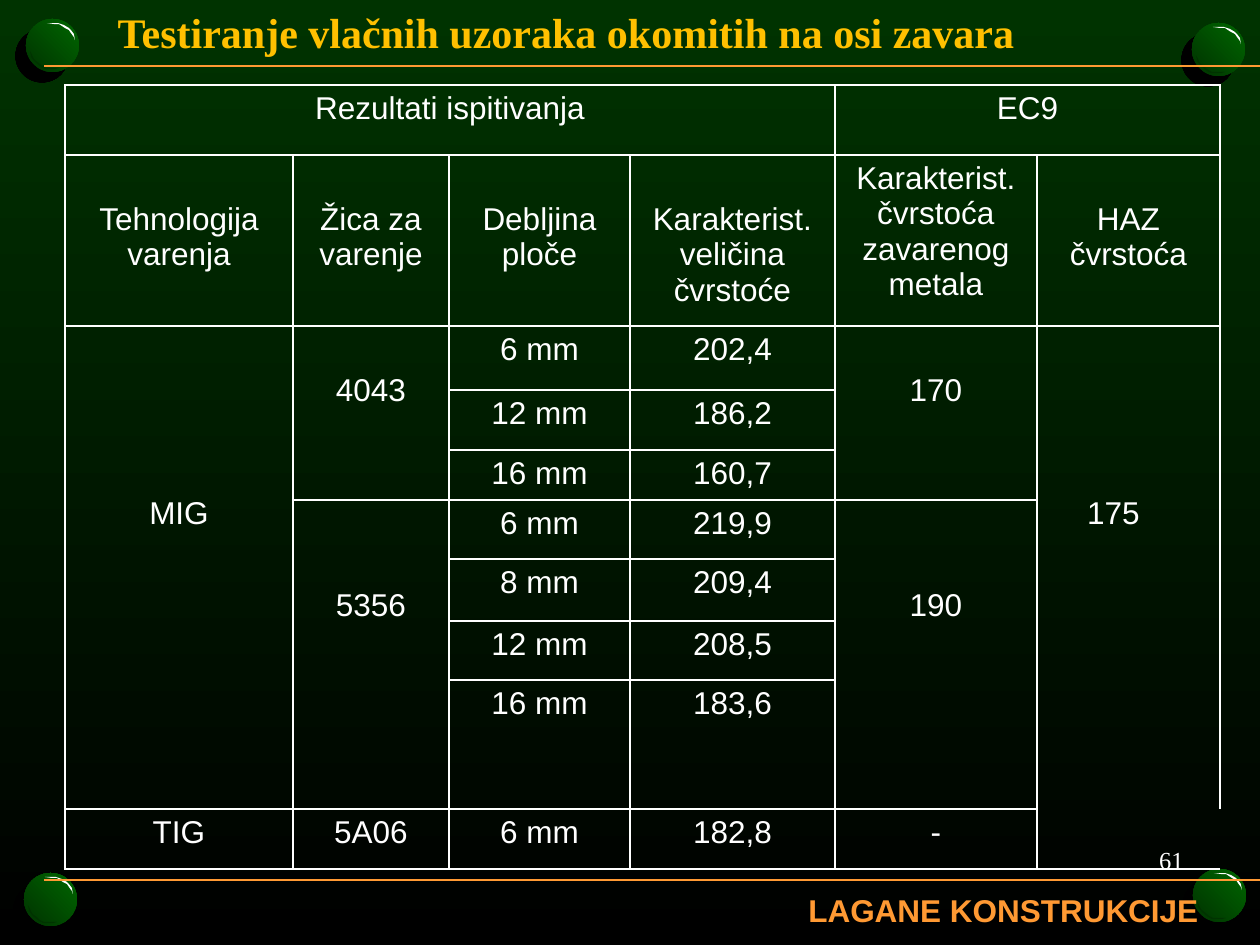
from lxml.etree import SubElement as Sub
from pptx import Presentation
from pptx.dml.color import RGBColor
from pptx.enum.shapes import MSO_CONNECTOR as Conn, MSO_SHAPE as Form
from pptx.enum.text import MSO_ANCHOR as Anchor, PP_ALIGN as Align
from pptx.oxml import parse_xml
from pptx.oxml.ns import nsdecls, qn
from pptx.util import Pt

SCALE = 914400 / 126
rgb = RGBColor.from_string


def px(*vals):
    """Turn px lengths into a list of EMU."""
    return [round(v * SCALE) for v in vals]


def write(frame, text, size=18, font="Arial", color="FFFFFF", bold=False,
          align=Align.LEFT, anchor=Anchor.TOP, wrap=True):
    frame.word_wrap = wrap
    frame.vertical_anchor = anchor
    para = frame.paragraphs[0]
    para.alignment = align
    run = para.add_run()
    run.text = text
    run.font.size = Pt(size)
    run.font.name = font
    run.font.bold = bold
    run.font.color.rgb = rgb(color)


deck = Presentation()
deck.slide_width, deck.slide_height = px(1260, 945)
slide = deck.slides.add_slide(deck.slide_layouts[5])
shapes = slide.shapes

# Background
back = slide.background.fill
back.gradient()
back.gradient_angle = 270
for stop, color in zip(back.gradient_stops, ("003300", "000000")):
    stop.color.rgb = rgb(color)

# Corner balls, each with a light and a dark rim
dot = shapes.add_shape(Form.OVAL, *px(1227, 19, 8, 8))
dot.shadow.inherit = False
dot.fill.solid()
dot.fill.fore_color.rgb = rgb("003300")
dot.line.fill.background()

SHINE = [(21, 4), (32, 4), (35, 5), (38, 6), (43, 9), (45, 11), (48, 15),
         (49, 21), (48, 18), (45, 14), (43, 11), (39, 9), (33, 5), (28, 5)]
SHADE = [(33, 49), (25, 49), (20, 49), (16, 47), (13, 44), (10, 42), (8, 40),
         (4, 32), (5, 38), (8, 42), (10, 44), (15, 48), (19, 50), (24, 50),
         (29, 50)]
for left, top in ((26, 19), (1192, 23), (1193, 869), (24, 873)):
    ball = shapes.add_shape(Form.OVAL, *px(left, top, 53, 53))
    ball.line.fill.background()
    ball.fill.gradient()
    ball.fill.gradient_angle = 45
    for stop, color in zip(ball.fill.gradient_stops, ("003300", "006600")):
        stop.color.rgb = rgb(color)
    ball._element.spPr.append(parse_xml(
        f'<a:effectLst {nsdecls("a")}><a:outerShdw dist="107950" dir="8100000"'
        ' algn="ctr" rotWithShape="0"><a:srgbClr val="000000"/></a:outerShdw>'
        '</a:effectLst>'))
    for pts, color in ((SHINE, "FFFFFF"), (SHADE, "003300")):
        spots = [(left + x, top + y) for x, y in pts]
        pen = shapes.build_freeform(*spots[0], scale=SCALE)
        pen.add_line_segments(spots[1:], close=True)
        rim = pen.convert_to_shape()
        rim.shadow.inherit = False
        rim.fill.solid()
        rim.fill.fore_color.rgb = rgb(color)
        rim.line.fill.background()

# Rules and footer
for y in (66, 880):
    rule = shapes.add_connector(Conn.STRAIGHT, *px(1260, y, 44, y))
    rule.line.color.rgb = rgb("FF9933")
    rule.line.width = Pt(0.75)
    Sub(rule._element.spPr, qn("a:effectLst"))

foot = shapes.add_textbox(*px(796, 885, 416, 50))
write(foot.text_frame, "LAGANE KONSTRUKCIJE", color="FF9933", bold=True,
      wrap=False)

# Results table
WIDTHS = (228, 156, 181, 205, 202, 153, 30)
HEIGHTS = (70, 171, 64, 60, 50, 59, 62, 59, 129, 60)
ROWS = [
    ("Rezultati ispitivanja", "", "", "", "EC9"),
    ("Tehnologija varenja", "Žica za varenje", "Debljina ploče",
     "Karakterist. veličina čvrstoće",
     "Karakterist. čvrstoća zavarenog metala", "HAZ čvrstoća"),
    ("MIG", "4043", "6 mm", "202,4", "170", "175"),
    ("", "", "12 mm", "186,2"),
    ("", "", "16 mm", "160,7"),
    ("", "5356", "6 mm", "219,9", "190"),
    ("", "", "8 mm", "209,4"),
    ("", "", "12 mm", "208,5"),
    ("", "", "16 mm", "183,6"),
    ("TIG", "5A06", "6 mm", "182,8", "-"),
]
# First and last cell of each merged block
SPANS = [(0, 0, 0, 3), (0, 4, 0, 6), (1, 5, 1, 6), (2, 0, 8, 0), (2, 1, 4, 1),
         (2, 4, 4, 4), (5, 1, 8, 1), (5, 4, 8, 4), (2, 5, 8, 5), (2, 6, 8, 6),
         (9, 5, 9, 6)]
# Lines by which a cell's text is lowered
DROPS = {(1, 0): 1, (1, 1): 1, (1, 2): 1, (1, 3): 1, (1, 5): 1, (2, 0): 4,
         (2, 1): 1, (2, 4): 1, (2, 5): 4, (5, 1): 2, (5, 4): 2}

holder = shapes.add_table(len(ROWS), len(WIDTHS),
                          *px(65, 85, sum(WIDTHS), sum(HEIGHTS)))
table = holder.table
table.first_row = table.horz_banding = False
for col, width in zip(table.columns, px(*WIDTHS)):
    col.width = width
for row, height in zip(table.rows, px(*HEIGHTS)):
    row.height = height

for r in range(len(ROWS)):
    for c in range(len(WIDTHS)):
        cell = table.cell(r, c)
        props = cell._tc.get_or_add_tcPr()
        bare = set()
        if r >= 2 and c >= 5:
            bare.add("R" if c == 5 else "L")
            bare.update({8: "B", 9: "T"}.get(r, ""))
        for side in "LRTB":
            edge = Sub(props, qn("a:ln" + side), w="12700")
            if side in bare:
                Sub(edge, qn("a:noFill"))
            else:
                paint = Sub(edge, qn("a:solidFill"))
                Sub(paint, qn("a:srgbClr"), val="FFFFFF")
        cell.fill.background()
        cell.margin_top = px(6 + 41 * DROPS.get((r, c), 0))[0]
        if c < len(ROWS[r]) and ROWS[r][c]:
            write(cell.text_frame, ROWS[r][c], align=Align.CENTER)

for r, c, r2, c2 in SPANS:
    table.cell(r, c).merge(table.cell(r2, c2))

# Title and page number
title = shapes.title
title.left, title.top, title.width, title.height = px(105, 0, 992, 63)
write(title.text_frame, "Testiranje vlačnih uzoraka okomitih na osi zavara",
      size=24, font="Times New Roman", color="FFC000", bold=True)

page = shapes.add_textbox(*px(920, 828, 276, 63))
write(page.text_frame, "61", size=14, font="Times New Roman",
      align=Align.RIGHT, anchor=Anchor.MIDDLE, wrap=False)

deck.save("out.pptx")
